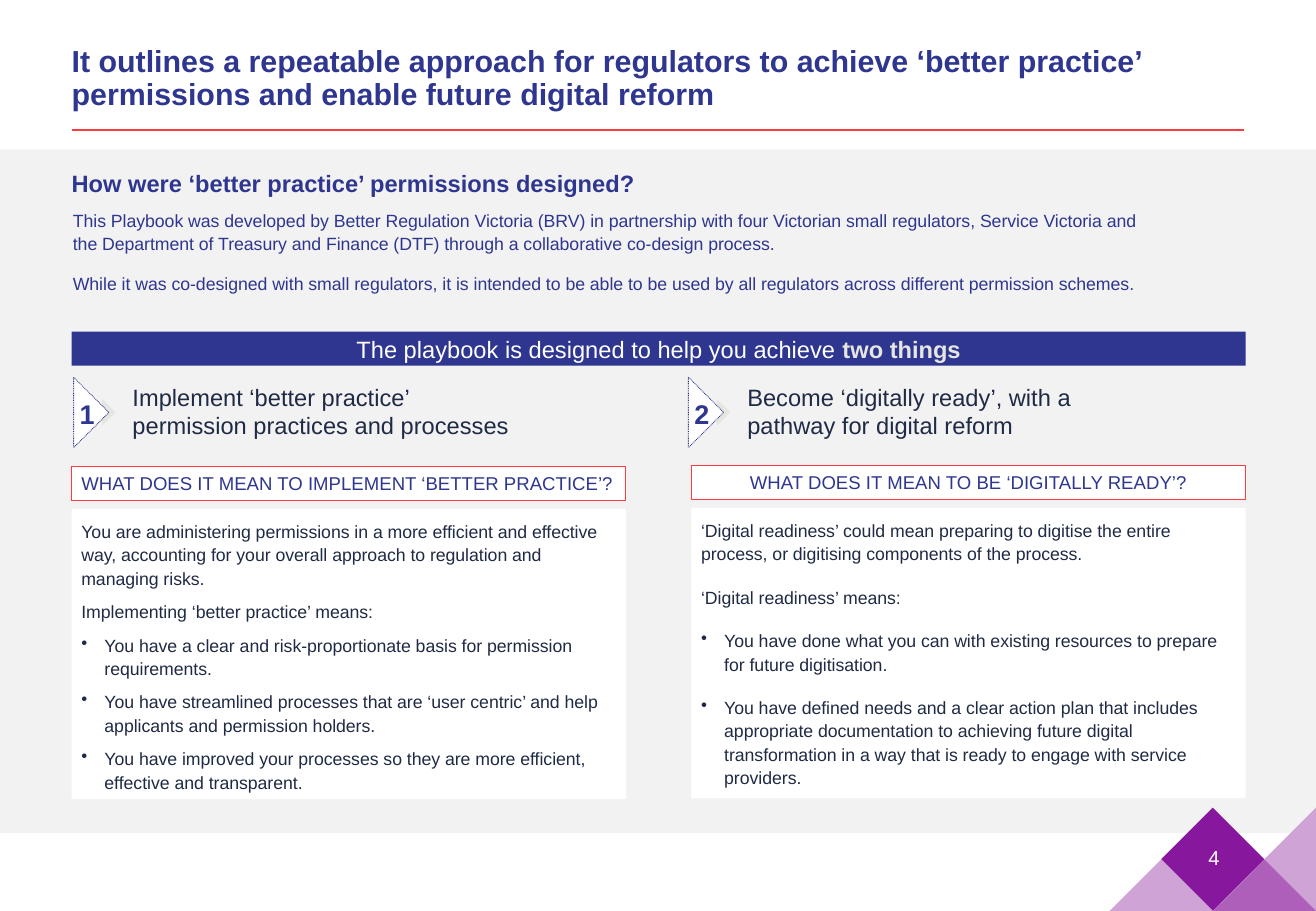
from dataclasses import dataclass

import lxml.etree
import pptx
import pptx.dml.color
import pptx.enum.dml
import pptx.enum.shapes
import pptx.enum.text
import pptx.oxml.ns
import pptx.shapes.base
import pptx.slide
import pptx.util

RGBColor = pptx.dml.color.RGBColor
Align = pptx.enum.text.PP_ALIGN
Anchor = pptx.enum.text.MSO_ANCHOR
Preset = pptx.enum.shapes.MSO_SHAPE
Length = pptx.util.Length

NAVY = RGBColor(0x2E, 0x36, 0x8F)
INK = RGBColor(0x1F, 0x2A, 0x44)
RED = RGBColor(0xFF, 0x3A, 0x40)
WHITE = RGBColor(0xFF, 0xFF, 0xFF)
PALE_GREY = RGBColor(0xF2, 0xF2, 0xF2)
WARM_GREY = RGBColor(0xE6, 0xE6, 0xE1)
PURPLE = RGBColor(0x87, 0x18, 0x9D)
LILAC = RGBColor(0xD0, 0xA3, 0xD7)
ORCHID = RGBColor(0xAD, 0x5F, 0xB9)

SLIDE_WIDTH = pptx.util.Inches(10.83)
SLIDE_HEIGHT = pptx.util.Inches(7.5)
BULLET_INDENT = pptx.util.Inches(0.19)

# Places and sizes are percentages of the slide's width and height.
MARGIN = 5.45
COLUMN_WIDTH = 42.11
MARKER_MIDDLE = 45.27
TILE_WIDTH, TILE_HEIGHT = 3.92, 5.67


@dataclass(frozen=True)
class Box:
    left: float
    top: float
    width: float
    height: float

    def lengths(self) -> tuple[Length, Length, Length, Length]:
        return across(self.left), down(self.top), across(self.width), down(self.height)


@dataclass(frozen=True)
class TextStyle:
    size: float
    color: RGBColor
    bold: bool = False
    align: Align = Align.LEFT
    anchor: Anchor = Anchor.TOP
    inset_x: float = 0.0
    inset_y: float = 0.05
    line_spacing: float = 1.0
    gap: float = 0


@dataclass(frozen=True)
class Column:
    number: str
    left: float
    top: float
    marker_center: float
    heading: str
    question: str
    question_align: Align
    statements: tuple[str, ...]
    bullets: tuple[str, ...]
    gap: float


COLUMNS = (
    Column("1", MARGIN, 51.2, 6.93,
           "Implement ‘better practice’\vpermission practices and processes",
           "WHAT DOES IT MEAN TO IMPLEMENT ‘BETTER PRACTICE’?", Align.LEFT,
           ("You are administering permissions in a more efficient and effective way, "
            "accounting for your overall approach to regulation and managing risks.",
            "Implementing ‘better practice’ means:"),
           ("You have a clear and risk-proportionate basis for permission requirements.",
            "You have streamlined processes that are ‘user centric’ and help applicants "
            "and permission holders.",
            "You have improved your processes so they are more efficient, effective "
            "and transparent."), 6),
    Column("2", 52.54, 51.07, 53.65,
           "Become ‘digitally ready’, with a\vpathway for digital reform",
           "WHAT DOES IT MEAN TO BE ‘DIGITALLY READY’?", Align.CENTER,
           ("‘Digital readiness’ could mean preparing to digitise the entire process, "
            "or digitising components of the process.",
            "‘Digital readiness’ means:"),
           ("You have done what you can with existing resources to prepare for future "
            "digitisation.",
            "You have defined needs and a clear action plan that includes appropriate "
            "documentation to achieving future digital transformation in a way that is "
            "ready to engage with service providers."), 12),
)

# Corners are counted in tiles from the mosaic's top left.
MOSAIC = (
    (PURPLE, ((1, 1), (2, 0), (3, 1), (2, 2))),
    (LILAC, ((4, 0), (4, 2), (3, 1))),
    (LILAC, ((1, 1), (2, 2), (0, 2))),
    (ORCHID, ((4, 2), (2, 2), (3, 1))),
)


def across(percent: float) -> Length:
    return Length(round(SLIDE_WIDTH * percent / 100))


def down(percent: float) -> Length:
    return Length(round(SLIDE_HEIGHT * percent / 100))


def paint(shape: pptx.shapes.base.BaseShape, fill: RGBColor,
          line: RGBColor | None = None, line_width: float = 0.75) -> None:
    shape.shadow.inherit = False
    shape.fill.solid()
    shape.fill.fore_color.rgb = fill
    if line is None:
        shape.line.fill.background()
    else:
        shape.line.color.rgb = line
        shape.line.width = pptx.util.Pt(line_width)


def add_rectangle(slide: pptx.slide.Slide, box: Box, fill: RGBColor,
                  line: RGBColor | None = None) -> pptx.shapes.base.BaseShape:
    shape = slide.shapes.add_shape(Preset.RECTANGLE, *box.lengths())
    paint(shape, fill, line)
    return shape


def add_bullet(paragraph) -> None:
    properties = paragraph._p.get_or_add_pPr()
    properties.set("marL", str(BULLET_INDENT))
    properties.set("indent", str(-BULLET_INDENT))
    bullet = lxml.etree.SubElement(properties, pptx.oxml.ns.qn("a:buChar"))
    bullet.set("char", "•")


def write(shape: pptx.shapes.base.BaseShape, style: TextStyle,
          texts: tuple[str, ...], bullets: tuple[str, ...] = ()) -> None:
    """Fill the shape with plain paragraphs, then bulleted ones."""
    frame = shape.text_frame
    frame.word_wrap = True
    frame.vertical_anchor = style.anchor
    frame.margin_left = frame.margin_right = pptx.util.Inches(style.inset_x)
    frame.margin_top = frame.margin_bottom = pptx.util.Inches(style.inset_y)
    for index, text in enumerate(texts + bullets):
        paragraph = frame.add_paragraph() if index else frame.paragraphs[0]
        paragraph.text = text
        paragraph.alignment = style.align
        paragraph.line_spacing = style.line_spacing
        paragraph.space_before = pptx.util.Pt(style.gap if index else 0)
        if index >= len(texts):
            add_bullet(paragraph)
        paragraph.font.name = "Arial"
        paragraph.font.size = pptx.util.Pt(style.size)
        paragraph.font.bold = style.bold
        paragraph.font.color.rgb = style.color


def add_text(slide: pptx.slide.Slide, box: Box, style: TextStyle, *texts: str) -> None:
    write(slide.shapes.add_textbox(*box.lengths()), style, texts)


def add_arrowhead(slide: pptx.slide.Slide, center: float, base: float, depth: float,
                  fill: RGBColor, line: RGBColor | None = None) -> None:
    """Draw a triangle pointing right; base is a share of height, depth of width."""
    width, height = down(base), across(depth)
    shape = slide.shapes.add_shape(
        Preset.ISOSCELES_TRIANGLE, across(center) - width // 2,
        down(MARKER_MIDDLE) - height // 2, width, height)
    shape.rotation = 90
    paint(shape, fill, line, 0.5)
    if line is not None:
        shape.line.dash_style = pptx.enum.dml.MSO_LINE.ROUND_DOT


def add_rule(slide: pptx.slide.Slide) -> None:
    rule = slide.shapes.add_connector(
        pptx.enum.shapes.MSO_CONNECTOR.STRAIGHT,
        across(MARGIN), down(14.27), across(100 - MARGIN), down(14.27))
    rule.line.color.rgb = RED
    rule.line.width = pptx.util.Pt(1.25)
    lxml.etree.SubElement(rule._element.spPr, pptx.oxml.ns.qn("a:effectLst"))


def add_mosaic(slide: pptx.slide.Slide) -> None:
    for color, corners in MOSAIC:
        points = [(across(100 - (4 - column) * TILE_WIDTH),
                   down(100 - (2 - row) * TILE_HEIGHT)) for column, row in corners]
        builder = slide.shapes.build_freeform(*points[0])
        builder.add_line_segments(points[1:], close=True)
        paint(builder.convert_to_shape(), color)
    add_text(slide, Box(90.03, 91.47, 4.43, 5.33),
             TextStyle(12, WHITE, align=Align.CENTER, anchor=Anchor.MIDDLE), "4")


def add_banner(slide: pptx.slide.Slide) -> None:
    banner = add_rectangle(slide, Box(MARGIN, 36.4, 89.2, 3.73), NAVY)
    write(banner, TextStyle(14, WHITE, align=Align.CENTER, anchor=Anchor.MIDDLE, inset_y=0),
          ("The playbook is designed to help you achieve ",))
    emphasis = banner.text_frame.paragraphs[0].add_run()
    emphasis.text = "two things"
    emphasis.font.bold = True
    emphasis.font.color.rgb = WARM_GREY


def add_column(slide: pptx.slide.Slide, column: Column) -> None:
    panel = add_rectangle(slide, Box(column.left, column.top + 4.67, COLUMN_WIDTH, 31.87), WHITE)
    write(panel, TextStyle(10.5, INK, inset_x=0.08, inset_y=0.08, line_spacing=1.1,
                           gap=column.gap), column.statements, column.bullets)
    question = add_rectangle(slide, Box(column.left, column.top, COLUMN_WIDTH, 3.73), WHITE, RED)
    write(question, TextStyle(11, NAVY, align=column.question_align, anchor=Anchor.MIDDLE,
                              inset_x=0.08, inset_y=0.04), (column.question,))
    center = column.marker_center
    add_text(slide, Box(center + 2.77, 41.47, 37.58, 7.73),
             TextStyle(14, INK, inset_x=0.04, inset_y=0.04), column.heading)
    add_arrowhead(slide, center + 1.34, 2.93, 1.02, WARM_GREY)
    add_arrowhead(slide, center, 7.73, 2.68, WHITE, NAVY)
    add_text(slide, Box(center - 1.66, 43.07, 2.68, 4.13),
             TextStyle(16, NAVY, True, Align.CENTER, inset_x=0.04, inset_y=0.04), column.number)


def main() -> None:
    presentation = pptx.Presentation()
    presentation.slide_width, presentation.slide_height = SLIDE_WIDTH, SLIDE_HEIGHT
    slide = presentation.slides.add_slide(presentation.slide_layouts[6])
    add_rectangle(slide, Box(0, 16.4, 100, 75.07), PALE_GREY)
    add_rule(slide)
    add_mosaic(slide)
    add_text(slide, Box(MARGIN, 4.27, 89.1, 8.67),
             TextStyle(18, NAVY, True, anchor=Anchor.BOTTOM, line_spacing=0.9),
             "It outlines a repeatable approach for regulators to achieve ‘better practice’ "
             "permissions and enable future digital reform")
    add_text(slide, Box(4.71, 18.53, 52.26, 3.07),
             TextStyle(14, NAVY, True, anchor=Anchor.MIDDLE, inset_x=0.08),
             "How were ‘better practice’ permissions designed?")
    add_text(slide, Box(5.54, 22.13, 82.92, 10.4),
             TextStyle(10.5, NAVY, line_spacing=1.1, gap=10),
             "This Playbook was developed by Better Regulation Victoria (BRV) in partnership "
             "with four Victorian small regulators, Service Victoria and the Department of "
             "Treasury and Finance (DTF) through a collaborative co-design process.",
             "While it was co-designed with small regulators, it is intended to be able to be "
             "used by all regulators across different permission schemes.")
    add_banner(slide)
    for column in COLUMNS:
        add_column(slide, column)
    presentation.save("out.pptx")


if __name__ == "__main__":
    main()
